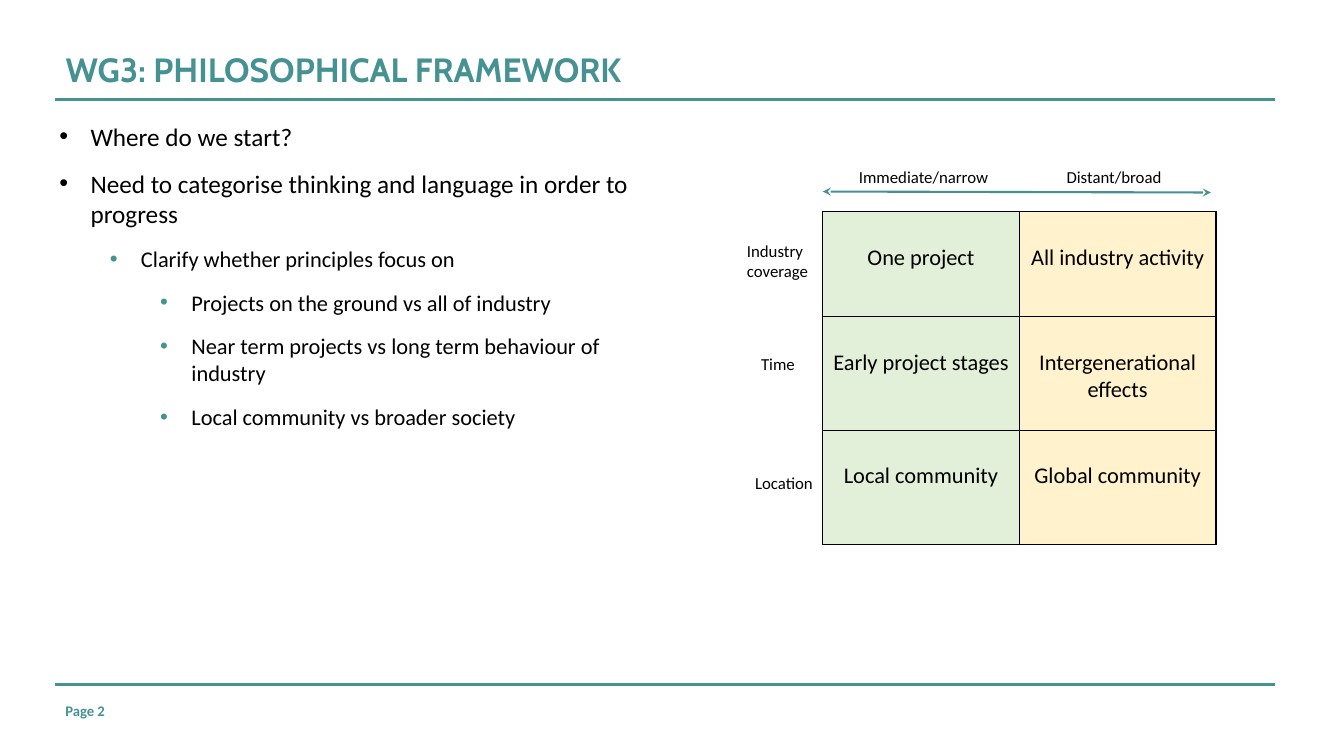
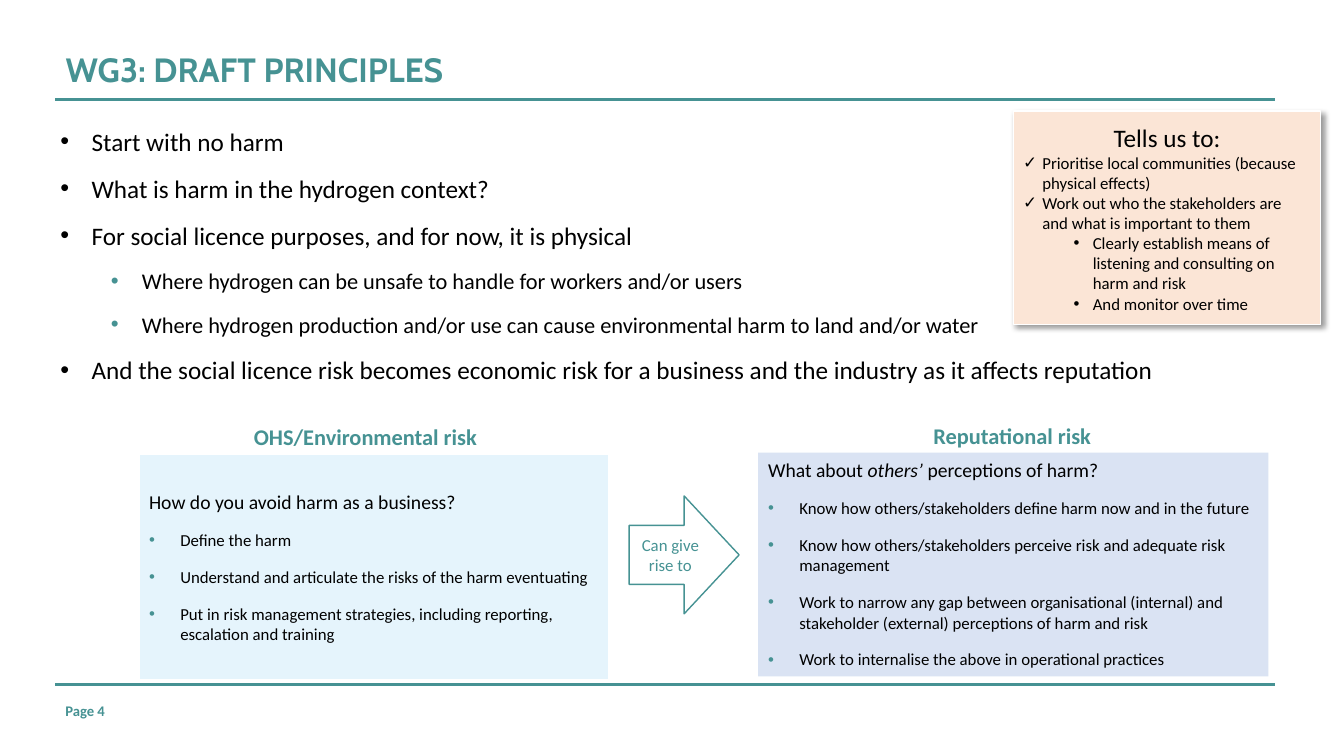
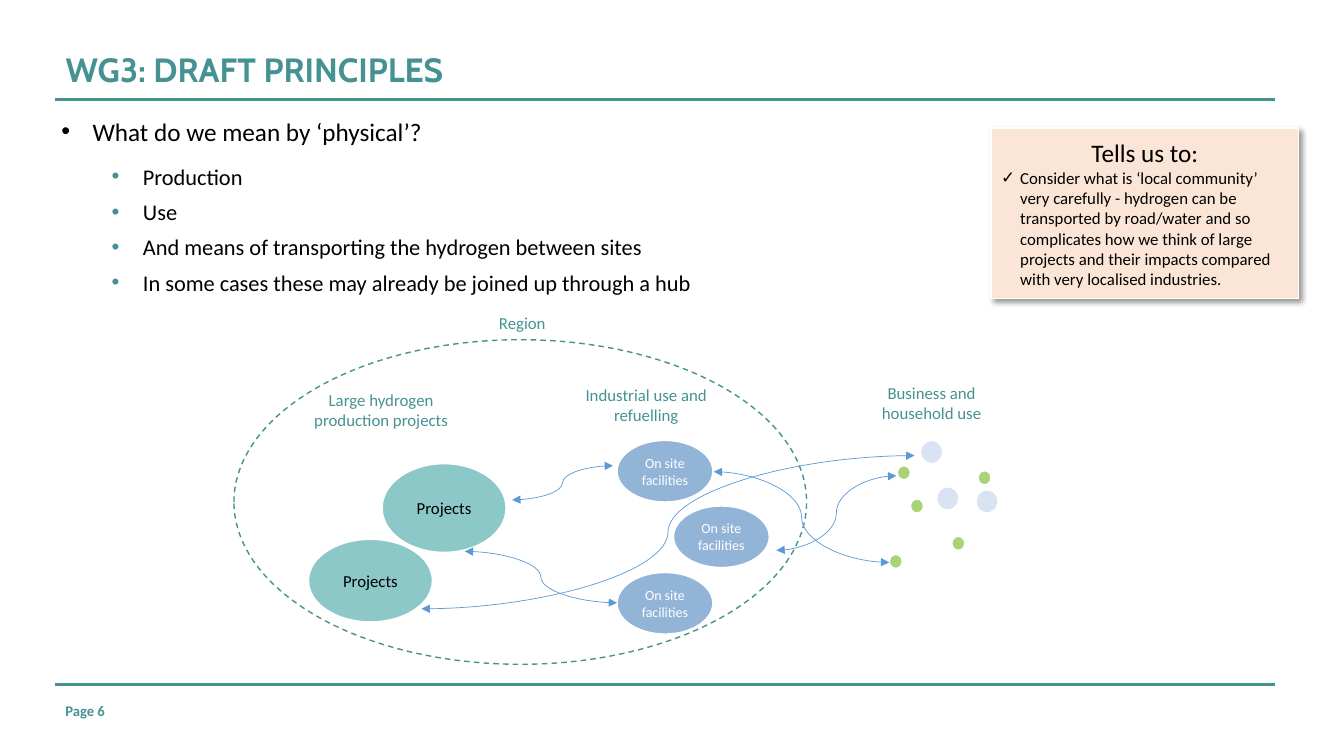
from lxml import etree
from pptx import Presentation
from pptx.dml.color import RGBColor
from pptx.enum import dml, shapes, text
from pptx.oxml import ns
from pptx.util import Emu, Pt

PX = 9144
WIDTH, HEIGHT = 1333, 750

TEAL = RGBColor(0x46, 0x92, 0x93)
BLACK = RGBColor(0, 0, 0)
WHITE = RGBColor(0xFF, 0xFF, 0xFF)
MINT = RGBColor(0xE2, 0xF0, 0xD9)
CREAM = RGBColor(0xFF, 0xF2, 0xCC)
ICE = RGBColor(0xE5, 0xF4, 0xFC)
LAVENDER = RGBColor(0xDA, 0xE3, 0xF3)
PEACH = RGBColor(0xFB, 0xE5, 0xD6)
AQUA = RGBColor(0x8D, 0xC8, 0xC9)
STEEL = RGBColor(0x92, 0xB4, 0xD7)
LEAF = RGBColor(0xA9, 0xD3, 0x77)
LINK = RGBColor(0x5B, 0x9B, 0xD5)

BODY_FONT, TITLE_FONT = "Calibri", "Cabin"
OVAL = shapes.MSO_SHAPE.OVAL
RECTANGLE = shapes.MSO_SHAPE.RECTANGLE
CENTER = text.PP_ALIGN.CENTER
MIDDLE = text.MSO_ANCHOR.MIDDLE

STYLES = {
    "point": dict(size=18, bullet="•", tint=BLACK, margin=31, hang=31, before=6, after=6),
    "detail": dict(size=16, bullet="•", tint=TEAL, margin=81, hang=31, before=6, after=6, level=1),
    "focus": dict(size=16, bullet="•", tint=TEAL, margin=131, hang=31, before=6, after=6, level=2),
    "tight": dict(size=16, bullet="•", tint=TEAL, margin=81, hang=31, before=6, level=1),
    "question": dict(size=14, before=6, after=6),
    "answer": dict(size=12, bullet="•", tint=TEAL, margin=31, hang=31, before=6, after=6),
    "callout": dict(size=18, align=CENTER),
    "check": dict(size=12, bullet="✓", tint=BLACK, margin=19, hang=19),
    "subcheck": dict(size=12, bullet="•", tint=BLACK, margin=69, hang=19, level=1),
    "label": dict(size=12),
    "caption": dict(size=12, color=TEAL, align=CENTER),
    "heading": dict(size=16, color=TEAL, bold=True),
    "page": dict(size=10.5, color=TEAL, bold=True),
    "cell": dict(size=16, align=CENTER),
    "project": dict(size=12, align=CENTER),
    "facility": dict(size=10, color=WHITE, align=CENTER),
}

FRAMEWORK_POINTS = [
    ("point", "Where do we start?"),
    ("point", "Need to categorise thinking and language in order to progress"),
    ("detail", "Clarify whether principles focus on"),
    ("focus", "Projects on the ground vs all of industry"),
    ("focus", "Near term projects vs long term behaviour of industry"),
    ("focus", "Local community vs broader society"),
]
FRAMEWORK_LABELS = [
    ("Immediate/narrow", (842, 161, 207, 30)),
    ("Distant/broad", (1048, 161, 121, 30)),
    ("Industry coverage", (731, 234, 103, 50)),
    ("Time", (745, 346, 103, 30)),
    ("Location", (739, 464, 115, 30)),
]
FRAMEWORK_ROWS = [
    (104, "One project", "All industry activity"),
    (113, "Early project stages", "Intergenerational effects"),
    (113, "Local community", "Global community"),
]
SCOPE_COLORS = (MINT, CREAM)

HARM_POINTS = [
    ("point", "Start with no harm"),
    ("point", "What is harm in the hydrogen context?"),
    ("point", "For social licence purposes, and for now, it is physical"),
    ("detail", "Where hydrogen can be unsafe to handle for workers and/or users"),
    ("detail", "Where hydrogen production and/or use can cause environmental harm to land and/or water"),
    ("point", "And the social licence risk becomes economic risk for a business and the industry "
              "as it affects reputation"),
]
HARM_ADVICE = [
    ("callout", "Tells us to:"),
    ("check", "Prioritise local communities (because physical effects)"),
    ("check", "Work out who the stakeholders are and what is important to them"),
    ("subcheck", "Clearly establish means of listening and consulting on harm and risk"),
    ("subcheck", "And monitor over time"),
]
RISK_HEADINGS = [
    ("OHS/Environmental risk", (242, 415, 291, 37)),
    ("Reputational risk", (916, 414, 300, 37)),
]
OHS_RISK = [
    ("question", "How do you avoid harm as a business?"),
    ("answer", "Define the harm"),
    ("answer", "Understand and articulate the risks of the harm eventuating"),
    ("answer", "Put in risk management strategies, including reporting, escalation and training"),
]
REPUTATION_RISK = [
    ("question", "What about ", "others’", " perceptions of harm?"),
    ("answer", "Know how others/stakeholders define harm now and in the future"),
    ("answer", "Know how others/stakeholders perceive risk and adequate risk management"),
    ("answer", "Work to narrow any gap between organisational (internal) and stakeholder (external) "
               "perceptions of harm and risk"),
    ("answer", "Work to internalise the above in operational practices"),
]

PHYSICAL_POINTS = [
    ("point", "What do we mean by ‘physical’?"),
    ("tight", "Production"),
    ("tight", "Use"),
    ("tight", "And means of transporting the hydrogen between sites"),
    ("tight", "In some cases these may already be joined up through a hub"),
]
PHYSICAL_ADVICE = [
    ("callout", "Tells us to:"),
    ("check", "Consider what is ‘local community’ very carefully - hydrogen can be transported by "
              "road/water and so complicates how we think of large projects and their impacts "
              "compared with very localised industries."),
]
REGION_CAPTIONS = [
    ("Region", (424, 305, 188, 30)),
    ("Large hydrogen production projects", (284, 382, 188, 50)),
    ("Industrial use and refuelling", (566, 377, 150, 50)),
    ("Business and household use", (849, 375, 150, 50)),
]
PROJECTS = [(379, 460, 123, 88), (306, 535, 123, 82)]
FACILITIES = [(612, 437), (668, 502), (612, 568)]
BUSINESSES = [(890, 462), (903, 495), (882, 550), (944, 532), (970, 467)]
HOUSEHOLDS = [(913, 437), (968, 486), (929, 483)]
ROUTES = [
    (708, 468, 882, 558),
    (770, 546, 889, 472),
    (461, 547, 612, 598),
    (418, 604, 907, 452),
    (508, 496, 608, 462),
]


def emu(*lengths):
    return [Emu(length * PX) for length in lengths]


def add_xml(parent, tag, **attributes):
    return etree.SubElement(parent, ns.qn(tag), attributes)


def write(frame, paragraphs):
    frame.word_wrap = True
    for index, (style_name, *pieces) in enumerate(paragraphs):
        style = STYLES[style_name]
        paragraph = frame.paragraphs[0] if index == 0 else frame.add_paragraph()
        paragraph.alignment = style.get("align", text.PP_ALIGN.LEFT)
        paragraph.level = style.get("level", 0)
        paragraph.space_before = Pt(style.get("before", 0) if index else 0)
        paragraph.space_after = Pt(style.get("after", 0))
        if "bullet" in style:
            props = paragraph._p.get_or_add_pPr()
            props.set("marL", str(style["margin"] * PX))
            props.set("indent", str(-style["hang"] * PX))
            add_xml(add_xml(props, "a:buClr"), "a:srgbClr", val=str(style["tint"]))
            add_xml(props, "a:buFont", typeface="Arial")
            add_xml(props, "a:buChar", char=style["bullet"])
        for position, piece in enumerate(pieces):
            run = paragraph.add_run()
            run.text = piece
            run.font.name = BODY_FONT
            run.font.size = Pt(style["size"])
            run.font.bold = style.get("bold", False)
            run.font.italic = position == 1
            run.font.color.rgb = style.get("color", BLACK)


def add_text(slide, box, paragraphs):
    write(slide.shapes.add_textbox(*emu(*box)).text_frame, paragraphs)


def add_block(slide, kind, box, fill=None, line=WHITE, paragraphs=(), anchor=MIDDLE):
    block = slide.shapes.add_shape(kind, *emu(*box))
    block.shadow.inherit = False
    if fill is None:
        block.fill.background()
    else:
        block.fill.solid()
        block.fill.fore_color.rgb = fill
    if line is None:
        block.line.fill.background()
    else:
        block.line.color.rgb = line
        block.line.width = Pt(1)
    block.text_frame.vertical_anchor = anchor
    write(block.text_frame, paragraphs)
    return block


def add_line(slide, ends, color, width, arrow=None, kind=shapes.MSO_CONNECTOR.STRAIGHT):
    connector = slide.shapes.add_connector(kind, *emu(*ends))
    connector.line.color.rgb = color
    connector.line.width = Pt(width)
    props = connector.element.spPr
    if arrow:
        outline = props.find(ns.qn("a:ln"))
        for end in ("a:headEnd", "a:tailEnd"):
            add_xml(outline, end, type=arrow)
    add_xml(props, "a:effectLst")


def add_advice(slide, box, paragraphs):
    card = add_block(slide, RECTANGLE, box, PEACH, paragraphs=paragraphs)
    effects = card.element.spPr.find(ns.qn("a:effectLst"))
    shadow = add_xml(effects, "a:outerShdw", blurRad=str(Pt(4)), dist=str(Pt(3)),
                     dir="2700000", algn="tl", rotWithShape="0")
    add_xml(add_xml(shadow, "a:srgbClr", val=str(BLACK)), "a:alpha", val="40000")


def add_slide(deck, heading, page):
    slide = deck.slides.add_slide(deck.slide_layouts[5])
    title = slide.shapes.title
    title.left, title.top, title.width, title.height = emu(55, 45, 1200, 52)
    title.text_frame.vertical_anchor = MIDDLE
    paragraph = title.text_frame.paragraphs[0]
    paragraph.alignment = text.PP_ALIGN.LEFT
    paragraph.line_spacing = 0.9
    run = paragraph.add_run()
    run.text = heading
    run.font.name = TITLE_FONT
    run.font.size = Pt(24)
    run.font.bold = True
    run.font.color.rgb = TEAL
    for y in (99, 679):
        add_line(slide, (55, y, 1265, y), TEAL, 2.25)
    add_text(slide, (55, 691, 70, 26), [("page", f"Page {page}")])
    return slide


def fill_cell(cell, words, fill):
    cell.fill.solid()
    cell.fill.fore_color.rgb = fill
    cell.margin_top = Emu(32 * PX)
    write(cell.text_frame, [("cell", words)])
    props = cell._tc.get_or_add_tcPr()
    for index, side in enumerate(("a:lnL", "a:lnR", "a:lnT", "a:lnB")):
        border = etree.Element(ns.qn(side), w=str(Pt(1)))
        add_xml(add_xml(border, "a:solidFill"), "a:srgbClr", val=str(BLACK))
        props.insert(index, border)


def framework_slide(deck):
    slide = add_slide(deck, "WG3: PHILOSOPHICAL FRAMEWORK", 2)
    add_text(slide, (49, 115, 611, 453), FRAMEWORK_POINTS)
    for label, box in FRAMEWORK_LABELS:
        add_text(slide, box, [("label", label)])
    total = sum(row[0] for row in FRAMEWORK_ROWS)
    table = slide.shapes.add_table(len(FRAMEWORK_ROWS), 2, *emu(816, 210, 390, total)).table
    table.first_row = table.horz_banding = False
    for column in table.columns:
        column.width = Emu(195 * PX)
    for r, (height, *scopes) in enumerate(FRAMEWORK_ROWS):
        table.rows[r].height = Emu(height * PX)
        for c, (scope, fill) in enumerate(zip(scopes, SCOPE_COLORS)):
            fill_cell(table.cell(r, c), scope, fill)
    add_line(slide, (816, 190, 1201, 191), TEAL, 1.5, "stealth")


def harm_slide(deck):
    slide = add_slide(deck, "WG3: DRAFT PRINCIPLES", 4)
    add_text(slide, (50, 120, 1228, 269), HARM_POINTS)
    add_block(slide, RECTANGLE, (138, 451, 466, 223), ICE, paragraphs=OHS_RISK)
    add_block(slide, RECTANGLE, (752, 449, 506, 222), LAVENDER, None, REPUTATION_RISK,
              text.MSO_ANCHOR.TOP)
    for heading, box in RISK_HEADINGS:
        add_text(slide, box, [("heading", heading)])
    add_block(slide, shapes.MSO_SHAPE.RIGHT_ARROW, (624, 492, 109, 117), WHITE, TEAL,
              [("caption", "Can give rise to")])
    add_advice(slide, (1005, 110, 305, 212), HARM_ADVICE)


def physical_slide(deck):
    slide = add_slide(deck, "WG3: DRAFT PRINCIPLES", 6)
    add_text(slide, (51, 110, 897, 311), PHYSICAL_POINTS)
    region = add_block(slide, OVAL, (232, 337, 568, 322), line=TEAL)
    region.line.dash_style = dml.MSO_LINE.DASH
    for box in PROJECTS:
        add_block(slide, OVAL, box, AQUA, paragraphs=[("project", "Projects")])
    for spot in FACILITIES:
        add_block(slide, OVAL, (*spot, 95, 61), STEEL,
                  paragraphs=[("facility", "On site facilities")])
    for caption, box in REGION_CAPTIONS:
        add_text(slide, box, [("caption", caption)])
    for spots, size, fill in ((BUSINESSES, (13, 14), LEAF), (HOUSEHOLDS, (22, 23), LAVENDER)):
        for spot in spots:
            add_block(slide, OVAL, (*spot, *size), fill)
    for route in ROUTES:
        add_line(slide, route, LINK, 0.5, "triangle", shapes.MSO_CONNECTOR.CURVE)
    add_advice(slide, (983, 127, 305, 169), PHYSICAL_ADVICE)


def main():
    deck = Presentation()
    deck.slide_width, deck.slide_height = emu(WIDTH, HEIGHT)
    framework_slide(deck)
    harm_slide(deck)
    physical_slide(deck)
    deck.save("out.pptx")


if __name__ == "__main__":
    main()
